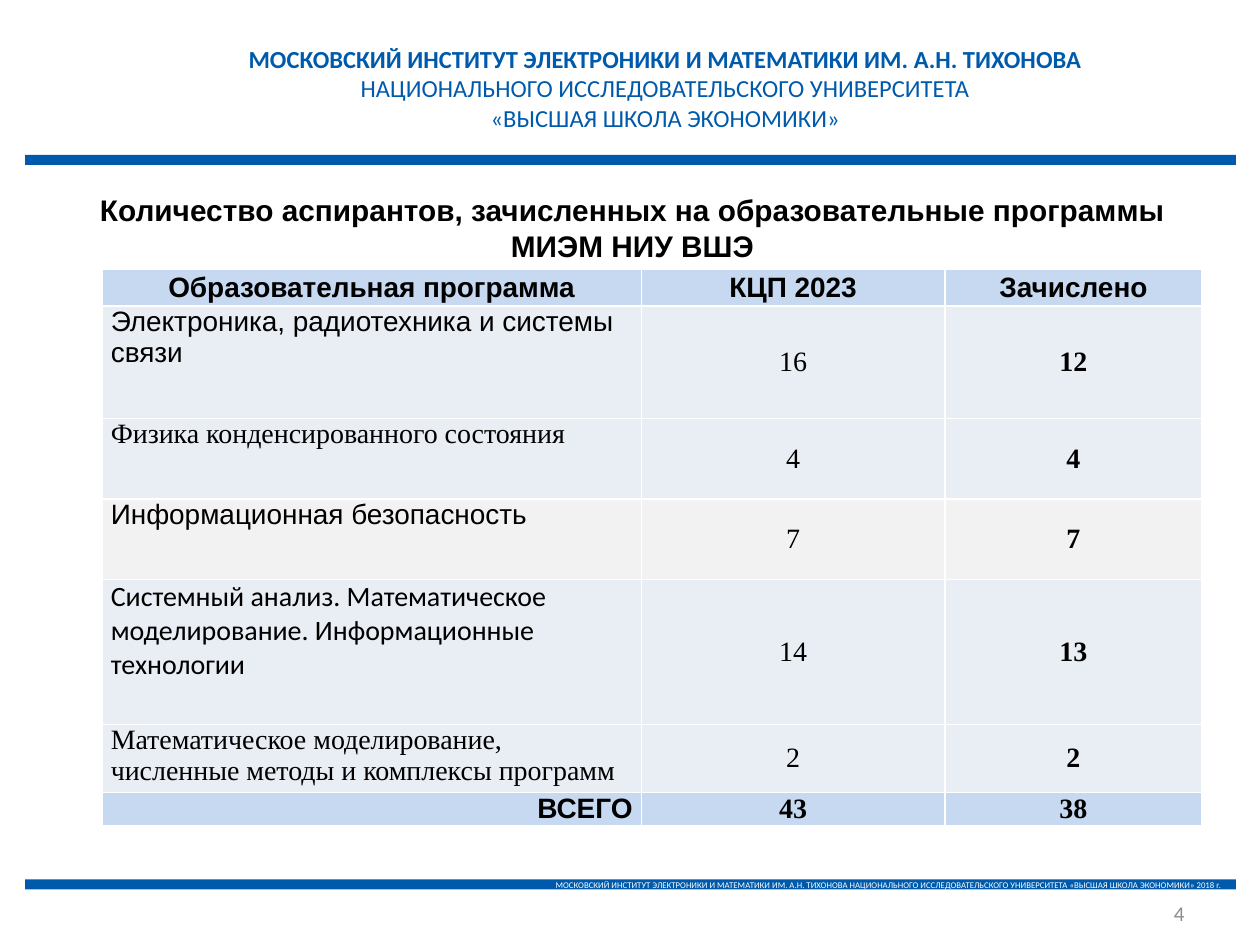
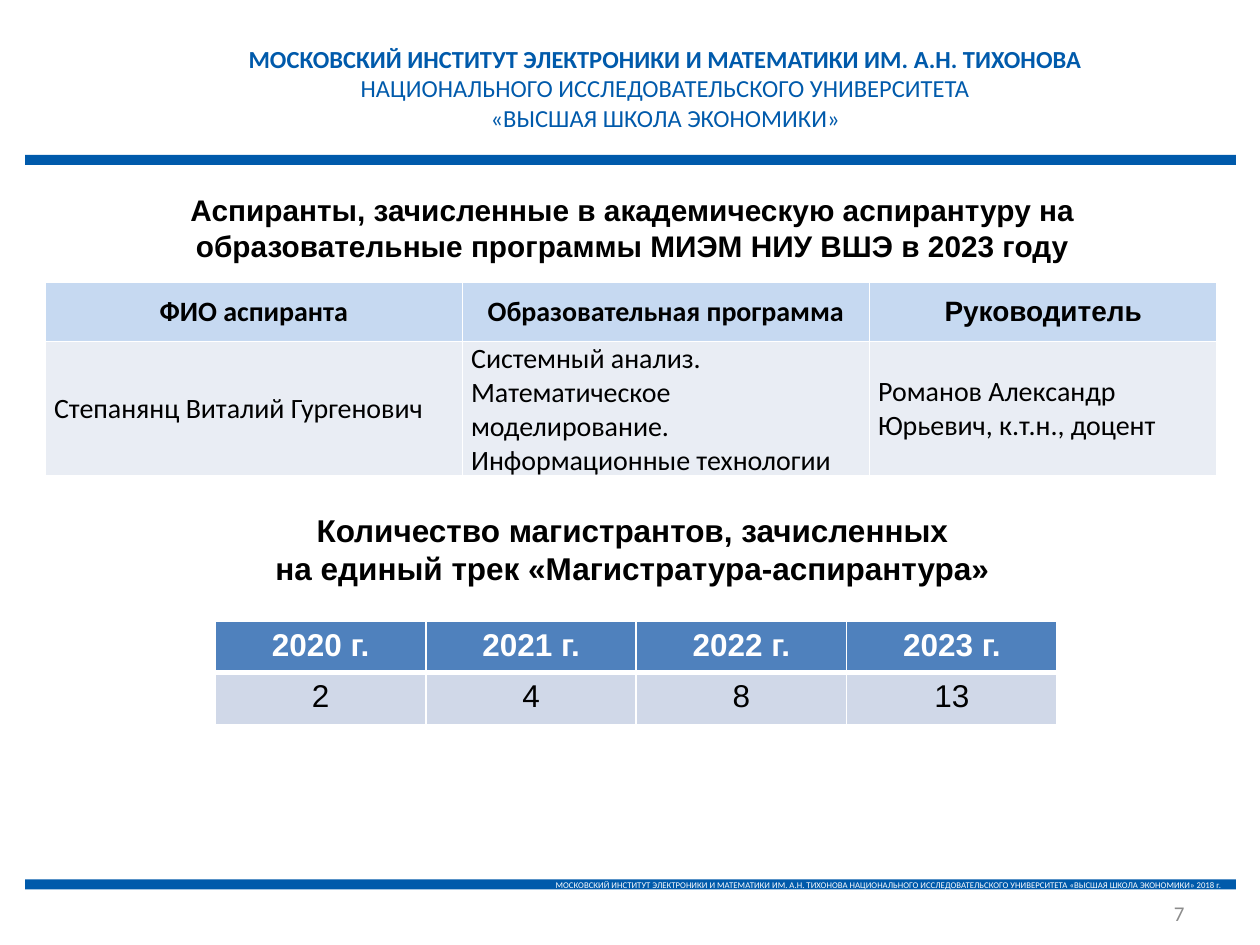
from lxml.etree import SubElement
from pptx import Presentation
from pptx.dml.color import RGBColor
from pptx.enum.shapes import MSO_SHAPE as Shape
from pptx.enum.text import MSO_ANCHOR as Anchor, PP_ALIGN as Align
from pptx.oxml.ns import qn
from pptx.util import Inches, Pt

BLUE = RGBColor(0x00, 0x5A, 0xAB)
HEAD_BLUE = RGBColor(0xC6, 0xD9, 0xF1)
ROW_BLUE = RGBColor(0xE9, 0xED, 0xF4)
ROW_GREY = RGBColor(0xF2, 0xF2, 0xF2)
YEAR_BLUE = RGBColor(0x4F, 0x81, 0xBD)
YEAR_PALE = RGBColor(0xD0, 0xD8, 0xE8)
NUMBER_GREY = RGBColor(0x8C, 0x8C, 0x8C)
BLACK = RGBColor(0, 0, 0)
WHITE = RGBColor(0xFF, 0xFF, 0xFF)

SANS, BODY, SERIF = "Arial", "Calibri", "Times New Roman"

INSTITUTE = "МОСКОВСКИЙ ИНСТИТУТ ЭЛЕКТРОНИКИ И МАТЕМАТИКИ ИМ. А.Н. ТИХОНОВА"
UNIVERSITY = "НАЦИОНАЛЬНОГО ИССЛЕДОВАТЕЛЬСКОГО УНИВЕРСИТЕТА"
SCHOOL = "«ВЫСШАЯ ШКОЛА ЭКОНОМИКИ»"


def write(frame, lines, size=16, font=SANS, color=BLACK, bold=False,
          align=Align.LEFT, anchor=Anchor.TOP, bold_lines=()):
    """Fill a text frame, one paragraph per line."""
    frame.word_wrap = True
    frame.vertical_anchor = anchor
    for i, line in enumerate([lines] if isinstance(lines, str) else lines):
        paragraph = frame.paragraphs[0] if i == 0 else frame.add_paragraph()
        paragraph.alignment = align
        run = paragraph.add_run()
        run.text = line
        run.font.size = Pt(size)
        run.font.name = font
        run.font.bold = bold or i in bold_lines
        run.font.color.rgb = color


def draw_borders(cell, bottom):
    """White cell borders, one point wide except for the bottom one."""
    props = cell._tc.get_or_add_tcPr()
    for side, width in zip("LRTB", (1, 1, 1, bottom)):
        line = SubElement(props, qn(f"a:ln{side}"), w=str(Pt(width)))
        SubElement(SubElement(line, qn("a:solidFill")),
                   qn("a:srgbClr"), val=str(WHITE))


class Deck:
    def __init__(self):
        self.prs = Presentation()
        self.prs.slide_width, self.prs.slide_height = Inches(10), Inches(7.5)
        self.slide = None

    def text(self, lines, left, top, width, height, **style):
        box = self.slide.shapes.add_textbox(
            Inches(left), Inches(top), Inches(width), Inches(height))
        write(box.text_frame, lines, **style)

    def heading(self, lines, top, height, size, **style):
        self.text(lines, 0.4, top, 9.24, height, size=size, bold=True,
                  align=Align.CENTER, **style)

    def band(self, top):
        bar = self.slide.shapes.add_shape(
            Shape.RECTANGLE, Inches(0.2), Inches(top), Inches(9.61), Inches(0.08))
        bar.shadow.inherit = False
        bar.fill.solid()
        bar.fill.fore_color.rgb = BLUE
        bar.line.fill.background()
        return bar

    def new_slide(self, number, title):
        self.slide = self.prs.slides.add_slide(self.prs.slide_layouts[6])
        # Header
        self.band(1.23)
        self.text([INSTITUTE, UNIVERSITY, SCHOOL], 1.86, 0.3, 6.84, 0.81, size=14,
                  font=BODY, color=BLUE, align=Align.CENTER, bold_lines=(0,))
        # Footer
        footer = self.band(6.98).text_frame
        footer.margin_top = footer.margin_bottom = 0
        write(footer, f"{INSTITUTE} {UNIVERSITY} {SCHOOL} 2018 г.", size=5, font=BODY,
              color=WHITE, align=Align.RIGHT, anchor=Anchor.MIDDLE)
        self.text(str(number), 7.17, 7.14, 2.33, 0.22, size=12, font=BODY,
                  color=NUMBER_GREY, align=Align.RIGHT, anchor=Anchor.MIDDLE)
        # Title
        self.heading(title, 1.47, 0.67, 17, anchor=Anchor.MIDDLE)

    def table(self, left, top, widths, heights, rows, fills,
              insets=None, head_border=1):
        """Rows hold (text, style) pairs; insets are side margins by column."""
        grid = self.slide.shapes.add_table(
            len(rows), len(widths), Inches(left), Inches(top),
            Inches(sum(widths)), Inches(sum(heights))).table
        grid.first_row = grid.horz_banding = False
        for column, width in zip(grid.columns, widths):
            column.width = Inches(width)
        for r, (height, cells, fill) in enumerate(zip(heights, rows, fills)):
            grid.rows[r].height = Inches(height)
            for c, (words, style) in enumerate(cells):
                cell = grid.cell(r, c)
                draw_borders(cell, head_border if r == 0 else 1)
                cell.fill.solid()
                cell.fill.fore_color.rgb = fill
                if insets:
                    cell.margin_left = cell.margin_right = Inches(insets[c])
                    cell.margin_top = cell.margin_bottom = 0
                write(cell.text_frame, words, **style)
                cell.vertical_anchor = style.get("anchor", Anchor.TOP)


def admissions_slide(deck):
    deck.new_slide(4, ["Количество аспирантов, зачисленных на образовательные программы",
                       "МИЭМ НИУ ВШЭ"])
    centred = dict(align=Align.CENTER, anchor=Anchor.MIDDLE)
    head = dict(centred, bold=True)
    quota = dict(centred, font=SERIF)
    enrolled = dict(quota, bold=True)
    programmes = [
        ("Электроника, радиотехника и системы связи", SANS, 16, 12),
        ("Физика конденсированного состояния", SERIF, 4, 4),
        ("Информационная безопасность", SANS, 7, 7),
        ("Системный анализ. Математическое моделирование. "
         "Информационные технологии", BODY, 14, 13),
        ("Математическое моделирование, численные методы и комплексы программ",
         SERIF, 2, 2),
    ]
    rows = [[(words, head) for words in
             ("Образовательная программа", "КЦП 2023", "Зачислено")]]
    rows += [[(name, dict(font=font)), (str(places), quota), (str(taken), enrolled)]
             for name, font, places, taken in programmes]
    rows.append([("ВСЕГО", dict(head, align=Align.RIGHT)),
                 (str(sum(p[2] for p in programmes)), enrolled),
                 (str(sum(p[3] for p in programmes)), enrolled)])
    deck.table(0.81, 2.14, [4.28, 2.41, 2.04],
               [0.29, 0.89, 0.64, 0.64, 1.15, 0.54, 0.26], rows,
               [HEAD_BLUE, ROW_BLUE, ROW_BLUE, ROW_GREY, ROW_BLUE, ROW_BLUE, HEAD_BLUE],
               insets=[0.07, 0.07, 0])


def academic_track_slide(deck):
    deck.new_slide(7, "Аспиранты, зачисленные в академическую аспирантуру на "
                      "образовательные программы МИЭМ НИУ ВШЭ в 2023 году")
    # Postgraduates and supervisors
    person = dict(font=BODY, anchor=Anchor.MIDDLE)
    head = dict(person, bold=True, align=Align.CENTER)
    deck.table(0.36, 2.24, [3.31, 3.23, 2.76], [0.47, 1.07], [
        [("ФИО аспиранта", head), ("Образовательная программа", head),
         ("Руководитель", dict(head, font=SANS))],
        [("Степанянц Виталий Гургенович", person),
         ("Системный анализ. Математическое моделирование. "
          "Информационные технологии", person),
         ("Романов Александр Юрьевич, к.т.н., доцент", person)],
    ], [HEAD_BLUE, ROW_BLUE], insets=[0.07] * 3)

    # Master's students by year
    deck.heading(["Количество магистрантов, зачисленных",
                  "на единый трек «Магистратура-аспирантура»"], 4.01, 0.71, 18)
    count = dict(size=18, align=Align.CENTER)
    year_head = dict(count, bold=True, color=WHITE)
    students = {2020: 2, 2021: 4, 2022: 8, 2023: 13}
    deck.table(1.71, 4.93, [1.67] * len(students), [0.41, 0.41], [
        [(f"{year} г.", year_head) for year in students],
        [(str(number), count) for number in students.values()],
    ], [YEAR_BLUE, YEAR_PALE], head_border=3)


def main():
    deck = Deck()
    admissions_slide(deck)
    academic_track_slide(deck)
    deck.prs.save("out.pptx")


if __name__ == "__main__":
    main()
